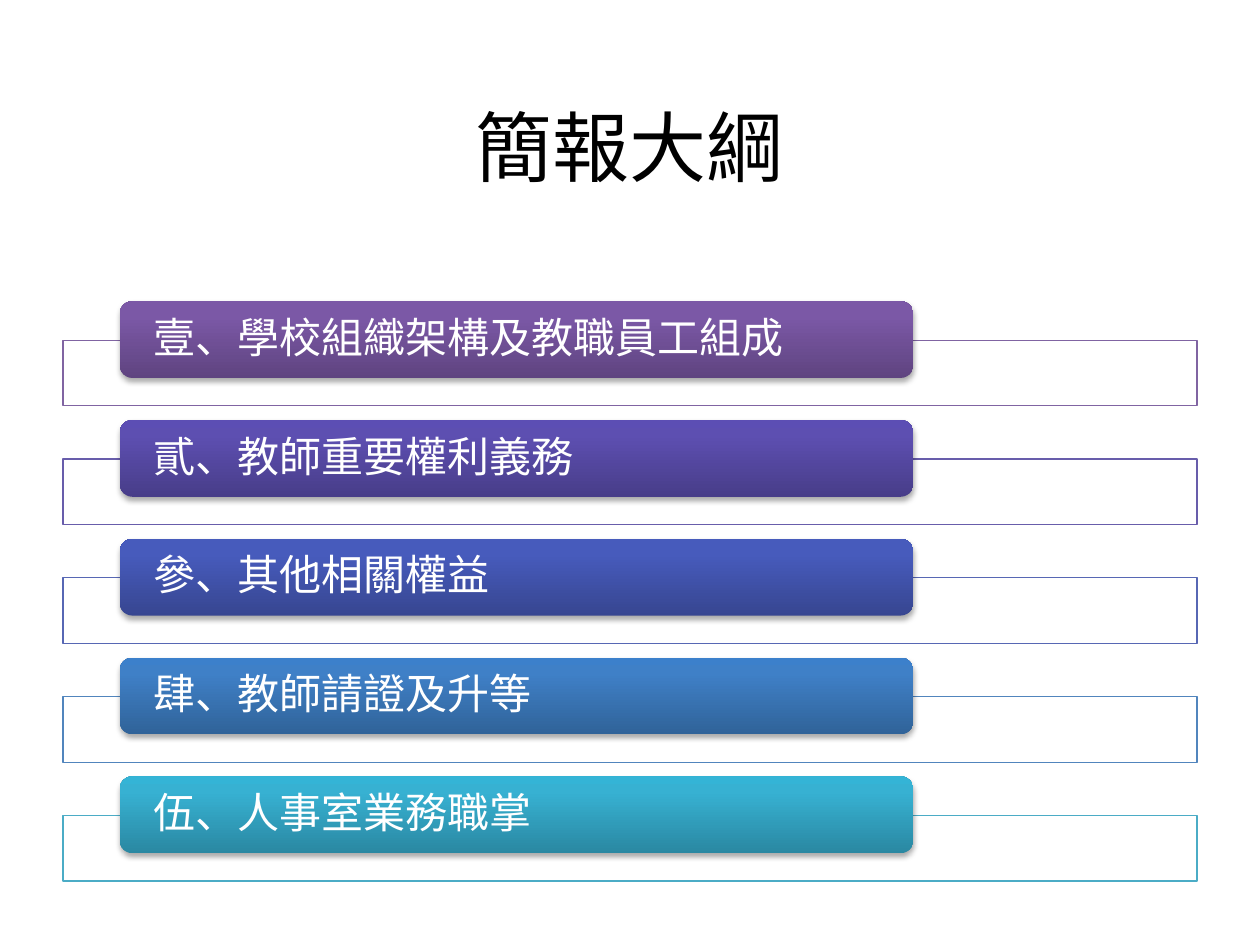
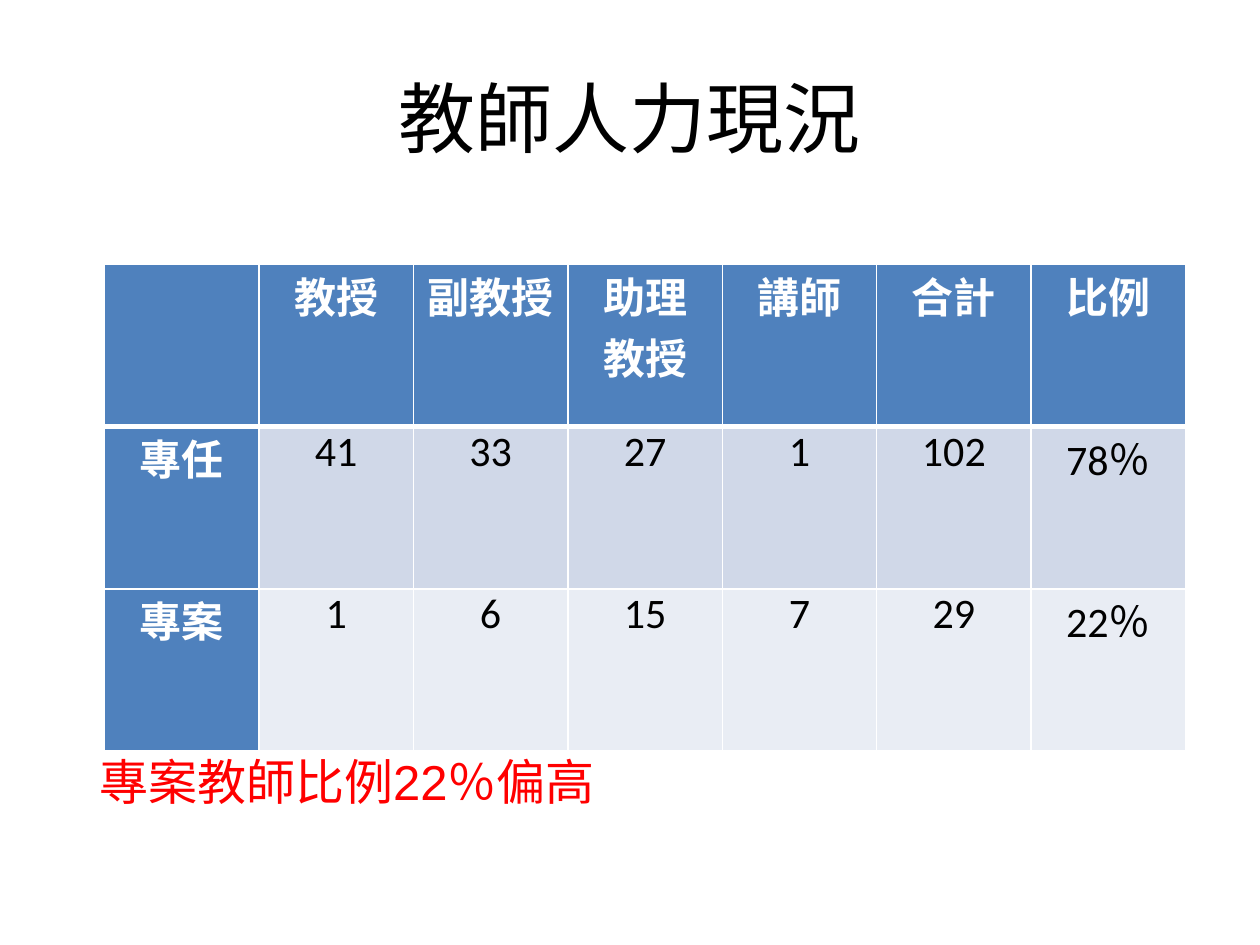
from dataclasses import dataclass

from lxml import etree
from pptx import Presentation
from pptx import oxml
from pptx import util as u
from pptx.dml.color import RGBColor
from pptx.enum import shapes, text
from pptx.oxml import ns


@dataclass(frozen=True)
class Theme:
    cjk: str = "Noto Sans CJK SC"
    latin: str = "Calibri"
    note_font: str = "Arial"
    black: str = "000000"
    white: str = "FFFFFF"
    red: str = "FF0000"
    header: str = "4F81BD"
    bands: tuple = ("D0D8E8", "E9EDF4")
    title_size: int = 44
    body_size: int = 24
    note_size: int = 28


T = Theme()

OUTLINE_TITLE = "簡報大綱"
OUTLINE = [
    ("壹、學校組織架構及教職員工組成", "8064A2", ("5F4480", "7B58A6", "7C57A8")),
    ("貳、教師重要權利義務", "685DAB", ("483D89", "5D4FB1", "5C4EB4")),
    ("參、其他相關權益", "5767B4", ("374691", "475BBC", "455ABF")),
    ("肆、教師請證及升等", "5185BD", ("306399", "3F80C7", "3C80CB")),
    ("伍、人事室業務職掌", "4BACC6", ("2A88A2", "37B1D2", "34B4D6")),
]

STAFF_TITLE = "教師人力現況"
STAFF = [
    ["", "教授", "副教授", "助理\n教授", "講師", "合計", "比例"],
    ["專任", "41", "33", "27", "1", "102", "78％"],
    ["專案", "1", "6", "15", "7", "29", "22％"],
]
STAFF_NOTE = "專案教師比例22％偏高"


def rgb(color):
    return RGBColor.from_string(color)


def box(*lengths):
    return [u.Inches(x) for x in lengths]


def write(tf, content, size=T.body_size, color=T.black, font=T.cjk, bold=False,
          align=text.PP_ALIGN.CENTER, spacing=None):
    for i, line in enumerate(content.split("\n")):
        p = tf.paragraphs[0] if i == 0 else tf.add_paragraph()
        p.alignment = align
        if spacing:
            p.line_spacing = spacing
        r = p.add_run()
        r.text = line
        r.font.size = u.Pt(size)
        r.font.bold = bold
        r.font.name = font
        r.font.color.rgb = rgb(color)
        ea = etree.SubElement(r.font._element, ns.qn("a:ea"))
        ea.set("typeface", T.cjk)


def frame(tf, left=0, right=0, anchor=text.MSO_ANCHOR.MIDDLE):
    tf.word_wrap = True
    tf.vertical_anchor = anchor
    tf.margin_left, tf.margin_right = box(left, right)
    tf.margin_top = tf.margin_bottom = 0


def add_slide(prs, title, area, font):
    s = prs.slides.add_slide(prs.slide_layouts[5])
    sp = s.shapes.title
    sp.left, sp.top, sp.width, sp.height = box(*area)
    sp.text_frame.vertical_anchor = text.MSO_ANCHOR.MIDDLE
    write(sp.text_frame, title, size=T.title_size, font=font)
    return s


def add_shape(s, kind, area):
    sp = s.shapes.add_shape(kind, *box(*area))
    sp.shadow.inherit = False
    return sp


def shade(sp, colors):
    sp.fill.gradient()
    sp.fill.gradient_angle = 90
    stops = sp._element.spPr.find(".//" + ns.qn("a:gsLst"))
    for gs in list(stops):
        stops.remove(gs)
    for pos, color in zip((0, 80, 100), colors):
        gs = etree.SubElement(stops, ns.qn("a:gs"), pos=str(pos * 1000))
        etree.SubElement(gs, ns.qn("a:srgbClr"), val=color)


def drop_shadow(sp):
    effects = sp._element.spPr.find(ns.qn("a:effectLst"))
    effects.append(oxml.parse_xml(
        f'<a:outerShdw {ns.nsdecls("a")} blurRad="{u.Pt(3.1)}" dist="{u.Pt(1.8)}" '
        'dir="5400000" rotWithShape="0"><a:srgbClr val="000000">'
        '<a:alpha val="35000"/></a:srgbClr></a:outerShdw>'))


def border(cell, bottom):
    tcPr = cell._tc.get_or_add_tcPr()
    for side, width in (("L", 1), ("R", 1), ("T", 1), ("B", bottom)):
        tcPr.append(oxml.parse_xml(
            f'<a:ln{side} {ns.nsdecls("a")} w="{u.Pt(width)}"><a:solidFill>'
            f'<a:srgbClr val="{T.white}"/></a:solidFill></a:ln{side}>'))


def outline_slide(prs):
    s = add_slide(prs, OUTLINE_TITLE, (0.5, 0.68, 9, 0.95), T.cjk)
    first, pitch = 2.39, 0.943
    for i, (item, line, colors) in enumerate(OUTLINE):
        top = first + i * pitch
        panel = add_shape(s, shapes.MSO_SHAPE.RECTANGLE, (0.5, top + 0.31, 9, 0.52))
        panel.fill.solid()
        panel.fill.fore_color.rgb = rgb(T.white)
        panel.line.color.rgb = rgb(line)
        panel.line.width = u.Pt(0.75)

        bar = add_shape(s, shapes.MSO_SHAPE.ROUNDED_RECTANGLE, (0.95, top, 6.3, 0.61))
        shade(bar, colors)
        drop_shadow(bar)
        bar.line.fill.background()
        frame(bar.text_frame, left=0.24, right=0.24)
        write(bar.text_frame, item, color=T.white, align=text.PP_ALIGN.LEFT, spacing=0.9)


def staff_slide(prs):
    s = add_slide(prs, STAFF_TITLE, (0.5, 0.3, 9, 1.25), T.latin)
    area = box(0.83, 2.1, 8.58, 3.86)
    table = s.shapes.add_table(len(STAFF), len(STAFF[0]), *area).table
    for r, row in enumerate(STAFF):
        for c, value in enumerate(row):
            cell = table.cell(r, c)
            is_header = r == 0 or c == 0
            border(cell, bottom=3 if r == 0 else 1)
            cell.fill.solid()
            cell.fill.fore_color.rgb = rgb(T.header if is_header else T.bands[r - 1])
            cell.margin_left = cell.margin_right = u.Inches(0.07)
            cell.margin_top = cell.margin_bottom = 0
            if value:
                write(cell.text_frame, value, font=T.latin, bold=is_header,
                      color=T.white if is_header else T.black)

    note = s.shapes.add_textbox(*box(0.79, 5.92, 8.5, 0.56)).text_frame
    frame(note)
    write(note, STAFF_NOTE, size=T.note_size, color=T.red, font=T.note_font,
          align=text.PP_ALIGN.LEFT)


def main():
    prs = Presentation()
    prs.slide_width, prs.slide_height = box(10, 7.5)
    outline_slide(prs)
    staff_slide(prs)
    prs.save("out.pptx")


if __name__ == "__main__":
    main()
